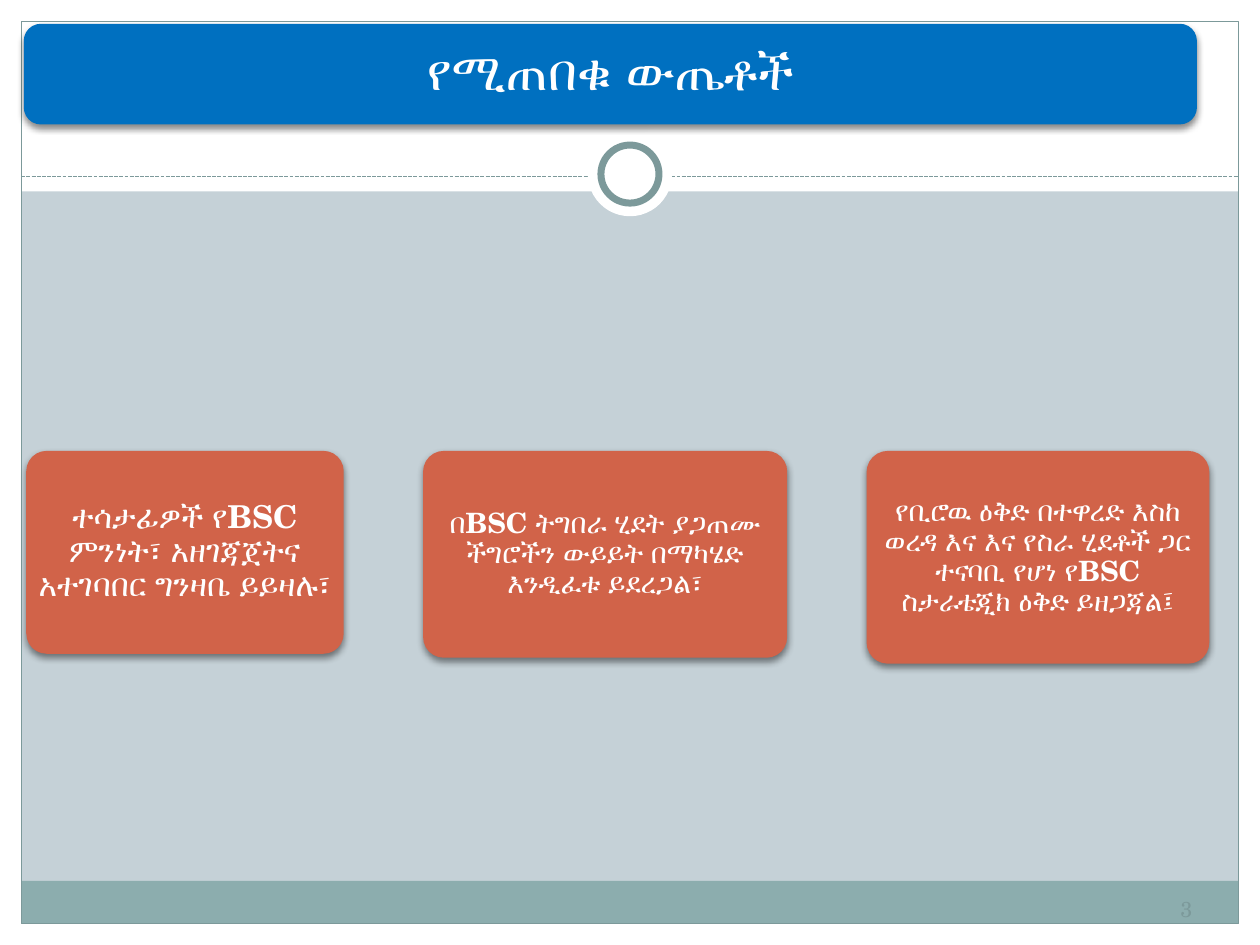
from lxml import etree
from pptx import Presentation
from pptx.dml.color import RGBColor
from pptx.enum.dml import MSO_LINE
from pptx.enum.shapes import MSO_CONNECTOR, MSO_SHAPE
from pptx.enum.text import MSO_ANCHOR, PP_ALIGN
from pptx.oxml.ns import qn
from pptx.util import Cm, Pt

RECT, ROUND, OVAL = MSO_SHAPE.RECTANGLE, MSO_SHAPE.ROUNDED_RECTANGLE, MSO_SHAPE.OVAL
STRAIGHT, DASH = MSO_CONNECTOR.STRAIGHT, MSO_LINE.SQUARE_DOT
CENTER, MIDDLE = PP_ALIGN.CENTER, MSO_ANCHOR.MIDDLE
FONT = "TeX Gyre Schola"
COLORS = {"back": "C5D1D7", "white": "FFFFFF", "band": "8CADAE", "edge": "7C999A",
          "title": "0070C0", "card": "D16349", "shade": "000000"}
WIDE, HIGH, EDGE = 25.4, 19.05, 0.43
CARDS = [
    (6.4, 4.09, 18, 0.1, "ተሳታፊዎች የBSC ምንነት፣ አዘገጃጀትና አተገባበር ግንዛቤ ይይዛሉ፣"),
    (7.34, 4.17, 16, 0.08, "በBSC ትግበራ ሂደት ያጋጠሙ ችግሮችን ውይይት በማካሄድ እንዲፈቱ ይደረጋል፣"),
    (6.91, 4.29, 16, 0.08, "የቢሮዉ ዕቅድ በተዋረድ እስከ ወረዳ እና እና የስራ ሂደቶች ጋር "
                           "ተናባቢ የሆነ የBSC ስታራቴጂክ ዕቅድ ይዘጋጃል፤"),
]


def color(name):
    """Return the named colour."""
    return RGBColor.from_string(COLORS[name])


def add_form(slide, kind, box, fill=None, line=None, width=0.75):
    """Add a flat preset shape."""
    form = slide.shapes.add_shape(kind, *map(Cm, box))
    form.shadow.inherit = False
    if fill:
        form.fill.solid()
        form.fill.fore_color.rgb = color(fill)
    else:
        form.fill.background()
    if line:
        form.line.color.rgb = color(line)
        form.line.width = Pt(width)
    else:
        form.line.fill.background()
    return form


def set_text(form, text, size, tone, pad, bold=False, lead=1.0):
    """Write one centred paragraph into a shape."""
    frame = form.text_frame
    frame.word_wrap = True
    frame.vertical_anchor = MIDDLE
    frame.margin_left = frame.margin_right = Cm(pad)
    frame.margin_top = frame.margin_bottom = Cm(pad)
    para = frame.paragraphs[0]
    para.text = text
    para.alignment = CENTER
    para.line_spacing = lead
    para.font.name = FONT
    para.font.size = Pt(size)
    para.font.bold = bold
    para.font.color.rgb = color(tone)


def add_shade(form):
    """Give a shape a soft shadow below it."""
    effects = form._element.spPr.find(qn("a:effectLst"))
    shade = etree.SubElement(effects, qn("a:outerShdw"), blurRad=str(Pt(4)),
                             dist=str(Pt(2)), dir="5400000", rotWithShape="0")
    tone = etree.SubElement(shade, qn("a:srgbClr"), val=COLORS["shade"])
    etree.SubElement(tone, qn("a:alpha"), val="45000")


def add_panel(slide, box, fill, text, size, pad, round_by):
    """Add a rounded, shaded panel with bold text."""
    form = add_form(slide, ROUND, box, fill)
    form.adjustments[0] = round_by
    add_shade(form)
    set_text(form, text, size, "white", pad, bold=True, lead=0.9)


def add_frame(slide, left, top, width, height):
    """Draw the margins, foot band, border, dashed rule and ring."""
    right, foot = left + width - EDGE, top + height - EDGE
    for box in [(left, foot, width, EDGE), (left, top, width, 3.86),
                (left, top, EDGE, height), (right, top, EDGE, height)]:
        add_form(slide, RECT, box, "white")
    inner = width - 2 * EDGE
    add_form(slide, RECT, (left + EDGE, foot - 0.86, inner, 0.86), "band")
    add_form(slide, RECT, (left + EDGE, top + EDGE, inner, height - 2 * EDGE), line="edge")
    level = top + 3.56
    rule = slide.shapes.add_connector(
        STRAIGHT, Cm(left + EDGE), Cm(level), Cm(right), Cm(level))
    rule.line.color.rgb = color("edge")
    rule.line.width = Pt(0.75)
    rule.line.dash_style = DASH
    etree.SubElement(rule._element.spPr, qn("a:effectLst"))
    for size, line in [(1.7, None), (1.17, "edge")]:
        box = (left + (width - size) / 2, top + 3.51 - size / 2, size, size)
        add_form(slide, OVAL, box, "white", line, 4)


def add_cards(slide, left, top, gap):
    """Place the result cards in a row with equal gaps."""
    for width, height, size, pad, text in CARDS:
        add_panel(slide, (left, top, width, height), "card", text, size, pad, 0.1)
        left += width + gap


def add_number(slide, box, number):
    """Add the slide number."""
    form = slide.shapes.add_textbox(*map(Cm, box))
    set_text(form, number, 12.4, "edge", 0.13)


def main():
    """Build and save the slide."""
    deck = Presentation()
    deck.slide_width, deck.slide_height = Cm(WIDE), Cm(HIGH)
    slide = deck.slides.add_slide(deck.slide_layouts[6])
    back = slide.background.fill
    back.solid()
    back.fore_color.rgb = color("back")
    add_frame(slide, 0, 0, WIDE, HIGH)
    add_panel(slide, (0.48, 0.48, 23.65, 2.03), "title", "የሚጠበቁ ውጤቶች", 29, 0.3, 0.17)
    add_number(slide, (22.86, 17.98, 2.11, 0.69), "3")
    add_cards(slide, 0.53, 9.09, 1.6)
    deck.save("out.pptx")


if __name__ == "__main__":
    main()
